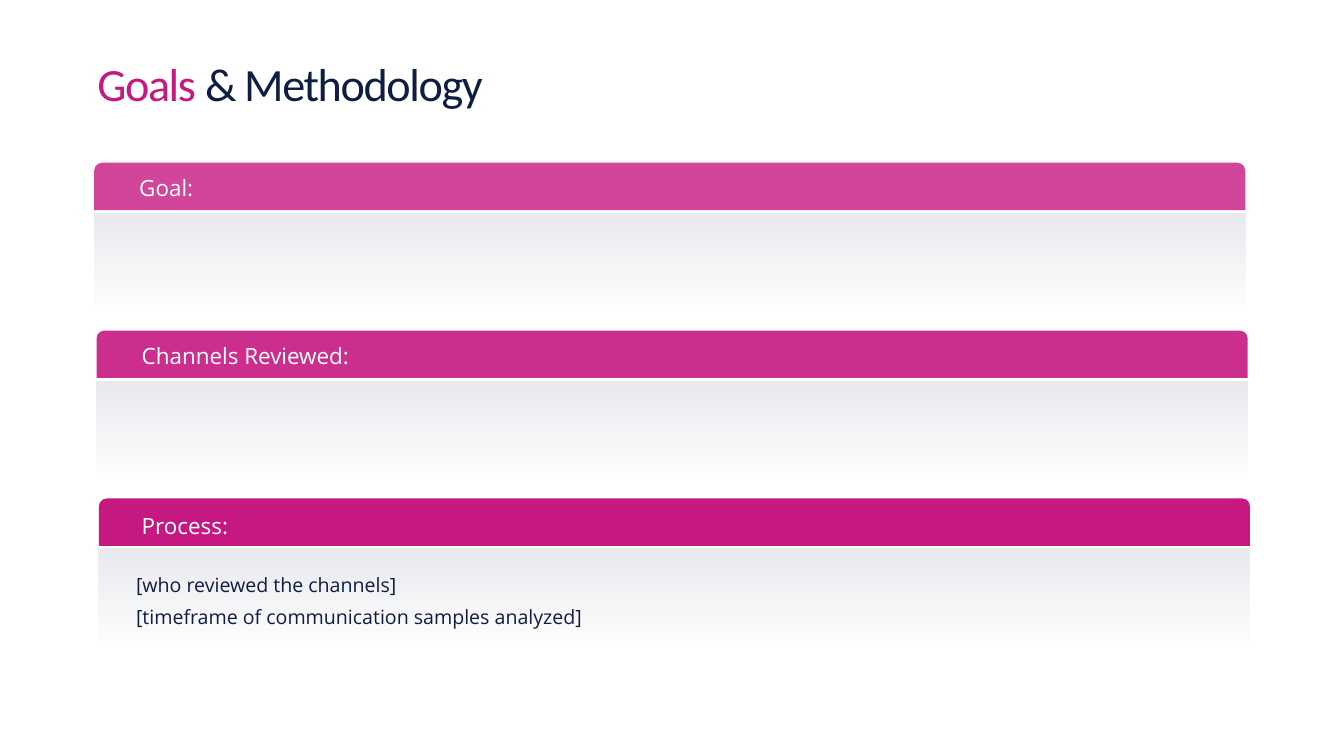
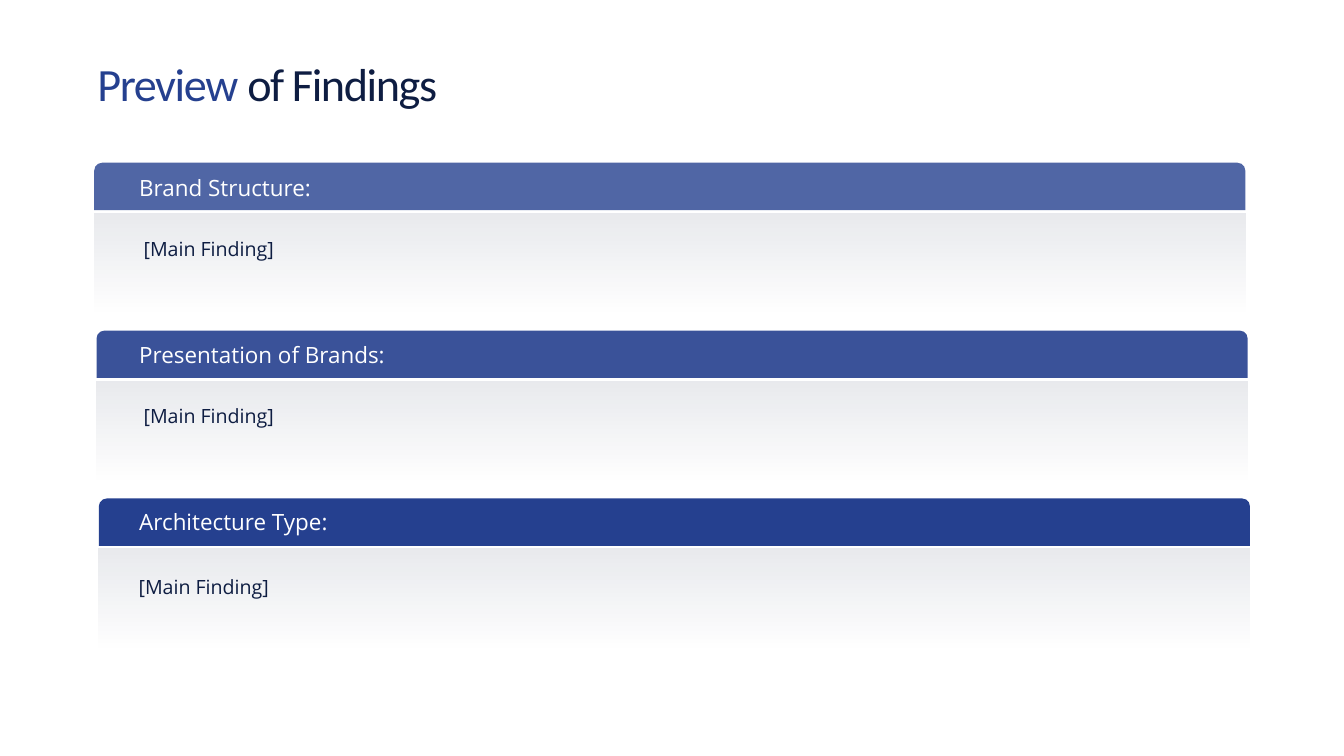
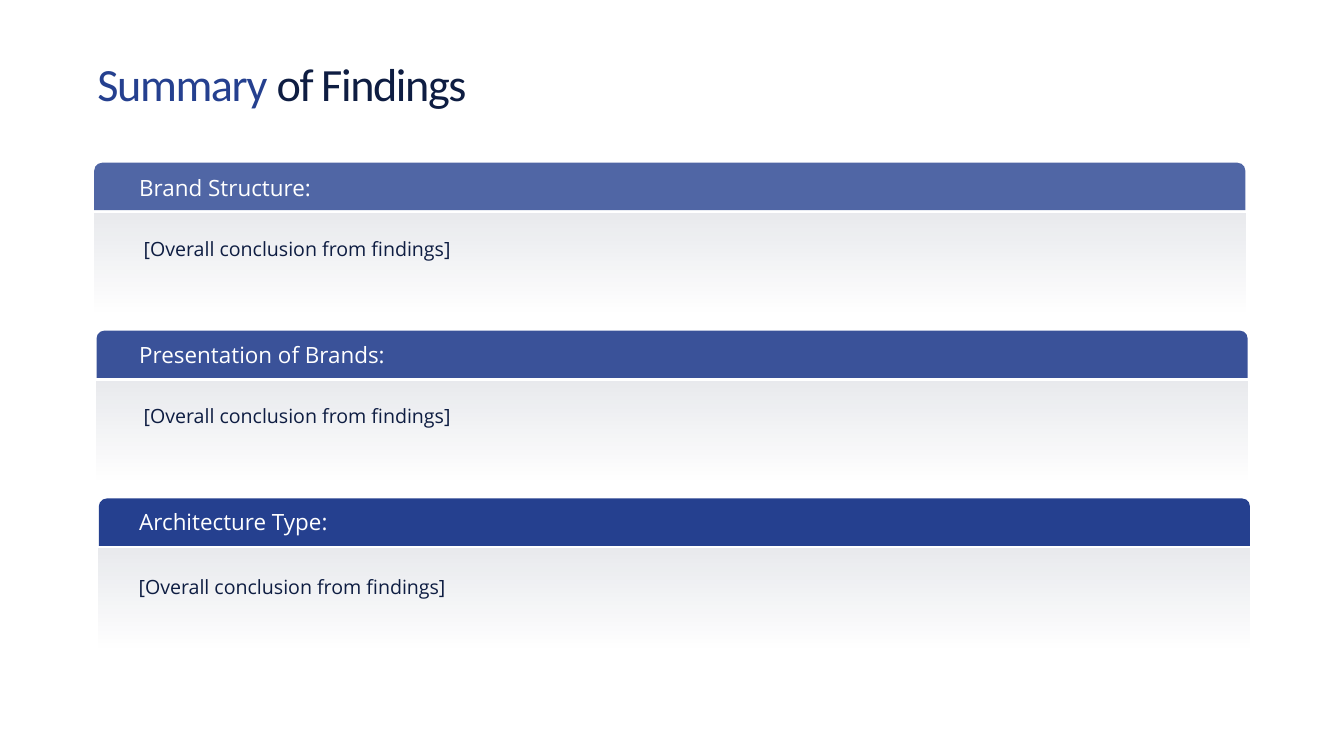
"""Build three slides of titled, stacked panels: goals, preview and summary."""
from lxml import etree
from pptx import Presentation
from pptx import util as u
from pptx.dml import color
from pptx.enum import shapes, text
from pptx.oxml import ns

HUES = {"navy": "0E1D42", "pink": "C61881", "blue": "25408F", "white": "FFFFFF"}
LEFT, WIDE, SHIFT = 134.6, 1644.5, 3.3
TOP, STEP = 232.5, 239.8
BAR, DROP, PANEL = 67.7, 72.2, 147.6


def block(page, kind, x, y, high, hue, alphas):
    """Add a full-width shape; two alphas make a downward fade."""
    form = page.shapes.add_shape(kind, u.Pt(x), u.Pt(y), u.Pt(WIDE), u.Pt(high))
    form.shadow.inherit = False
    form.line.fill.background()
    if len(alphas) == 2:
        form.fill.gradient()
        form.fill.gradient_angle = 270
        tones = [stop.color for stop in form.fill.gradient_stops]
    else:
        form.fill.solid()
        tones = [form.fill.fore_color]
    for tone in tones:
        tone.rgb = color.RGBColor.from_string(HUES[hue])
    for node, alpha in zip(form.element.iter(ns.qn("a:srgbClr")), alphas):
        if alpha < 100:
            etree.SubElement(node, ns.qn("a:alpha")).set("val", str(alpha * 1000))


def write(page, x, y, wide, high, paras, size, font, inset):
    """Add a text box; each paragraph is a list of (words, hue) runs."""
    frame = page.shapes.add_textbox(u.Pt(x), u.Pt(y), u.Pt(wide), u.Pt(high)).text_frame
    frame.word_wrap = True
    frame.margin_left = frame.margin_right = u.Pt(inset)
    frame.margin_top = frame.margin_bottom = u.Pt(inset)
    for i, parts in enumerate(paras):
        para = frame.add_paragraph() if i else frame.paragraphs[0]
        for words, hue in parts:
            run = para.add_run()
            run.text = words
            run.font.size = u.Pt(size)
            run.font.name = font
            run.font.color.rgb = color.RGBColor.from_string(HUES[hue])
    return frame


heads = ["Brand Structure:", "Presentation of Brands:", "Architecture Type:"]
spots = [(194.4, 245.5), (194.4, 483.8), (194.4, 721.4)]
notes = [(194.4, 336.2, 455.8, 35.3), (194.4, 575.3, 455.8, 35.3), (187.2, 818.6, 455.8, 35.3)]
pages = [
    ("Goals ", "& Methodology", "pink",
     ["Goal:", "Channels Reviewed:", "Process:"],
     [(194.4, 245.5), (198, 485.3), (198, 727.2)],
     [(194.4, 817.9, 705.6, 79.9)],
     ["[who reviewed the channels]", "[timeframe of communication samples analyzed]"], False),
    ("Preview ", "of Findings", "blue", heads, spots, notes, ["[Main Finding]"], True),
    ("Summary ", "of Findings", "blue", heads, spots, notes,
     ["[Overall conclusion from findings]"], True),
]

deck = Presentation()
deck.slide_width, deck.slide_height = u.Pt(1920), u.Pt(1080)

for first, rest, hue, labels, places, boxes, lines, indent in pages:
    page = deck.slides.add_slide(deck.slide_layouts[6])

    title = write(page, LEFT, 89.3, 938.2, 90.7, [[(first, hue), (rest, "navy")]], 66, "Calibri", 4.5)
    title.paragraphs[0].line_spacing = 0.8
    for run in title.paragraphs[0].runs:
        run.font.element.set("spc", "-200") if hasattr(run.font, "element") else run._r.get_or_add_rPr().set("spc", "-200")

    for i, (label, (x, y)) in enumerate(zip(labels, places)):
        side, top = LEFT + i * SHIFT, TOP + i * STEP
        block(page, shapes.MSO_SHAPE.RECTANGLE, side, top + DROP, PANEL, "navy", [10, 0])
        block(page, shapes.MSO_SHAPE.ROUND_2_SAME_RECTANGLE, side, top, BAR, hue, [80 + 10 * i])
        head = write(page, x, y, 424.8, 46.1, [[(label, "white")]], 32, "Open Sans", 4.5)
        head.vertical_anchor = text.MSO_ANCHOR.MIDDLE
        head.auto_size = text.MSO_AUTO_SIZE.SHAPE_TO_FIT_TEXT

    for box in boxes:
        body = write(page, *box, [[(line, "navy")] for line in lines], 28, "Open Sans", 0)
        body.auto_size = text.MSO_AUTO_SIZE.SHAPE_TO_FIT_TEXT
        for para in body.paragraphs:
            para.space_before = u.Pt(12)
            if indent:
                para.line_spacing = u.Pt(36)
                para._p.get_or_add_pPr().set("indent", str(u.Pt(10.8)))

deck.save("out.pptx")
